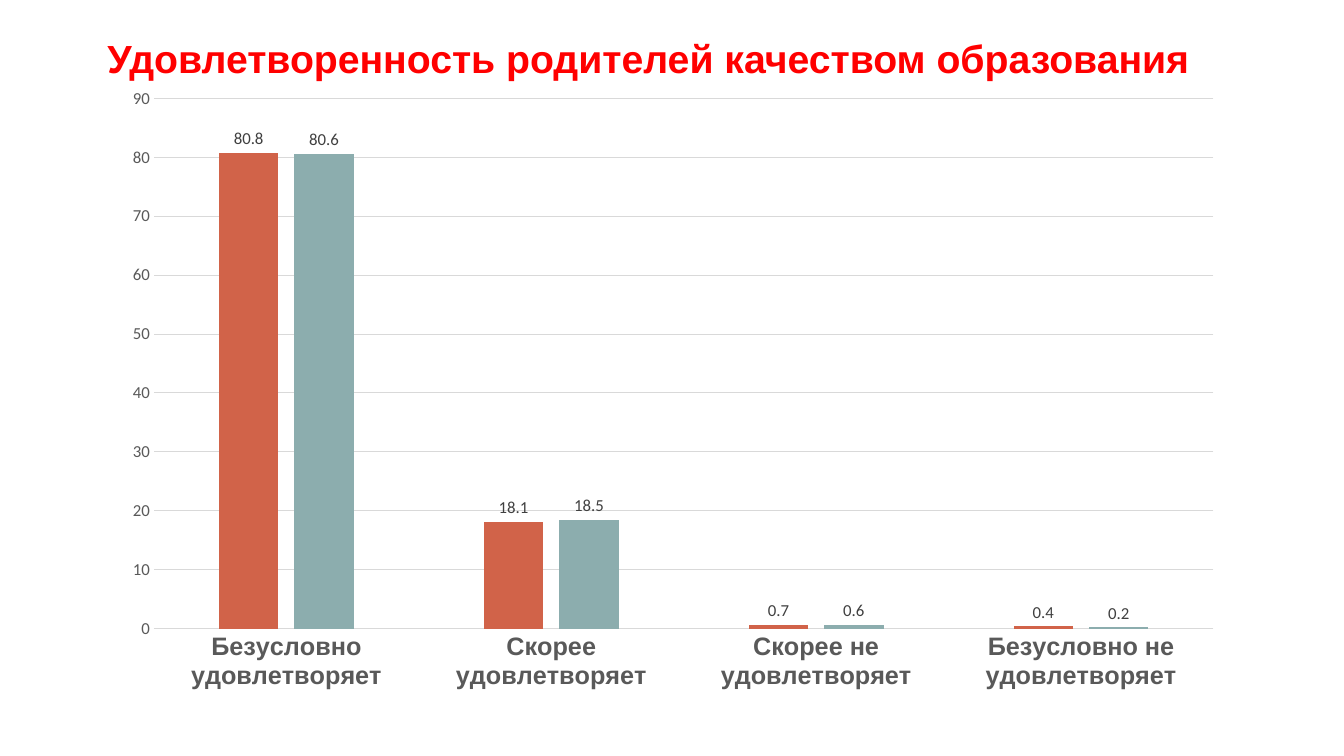
from lxml import etree
from pptx import Presentation
from pptx.chart.data import CategoryChartData
from pptx.dml.color import RGBColor
from pptx.enum.chart import XL_CHART_TYPE as ChartType
from pptx.enum.chart import XL_LABEL_POSITION as LabelPosition
from pptx.enum.chart import XL_TICK_MARK as TickMark
from pptx.enum.text import MSO_ANCHOR as Anchor
from pptx.enum.text import PP_ALIGN as Align
from pptx.oxml.ns import qn
from pptx.util import Inches, Pt

COLORS = {
    "title": "FF0000",
    "axis_text": "595959",
    "grid": "D9D9D9",
    "label": "404040",
}
ANSWERS = [
    "Безусловно удовлетворяет",
    "Скорее удовлетворяет",
    "Скорее не удовлетворяет",
    "Безусловно не удовлетворяет",
]
SURVEYS = [
    ("Series 1", (80.8, 18.1, 0.7, 0.4), "D16349"),
    ("Series 2", (80.6, 18.5, 0.6, 0.2), "8CADAE"),
]
PLOT_LAYOUT = {"x": 0.04, "y": 0.03, "w": 0.94, "h": 0.85}


def rgb(value):
    return RGBColor.from_string(value)


def style_font(font, size, color, name="Calibri", bold=False):
    font.size = Pt(size)
    font.name = name
    font.bold = bold
    font.color.rgb = rgb(color)


def style_line(line):
    line.color.rgb = rgb(COLORS["grid"])
    line.width = Pt(0.75)


def place_plot(chart):
    plot_area = chart.plots[0]._element.getparent()
    layout = plot_area.find(qn("c:layout"))
    if layout is None:
        layout = etree.Element(qn("c:layout"))
        plot_area.insert(0, layout)
    manual = etree.SubElement(layout, qn("c:manualLayout"))
    settings = {"layoutTarget": "inner", "xMode": "edge", "yMode": "edge", **PLOT_LAYOUT}
    for tag, value in settings.items():
        etree.SubElement(manual, qn(f"c:{tag}")).set("val", str(value))


def add_heading(slide, left, top, width, height):
    heading = slide.shapes.title
    heading.left, heading.top = Inches(left), Inches(top)
    heading.width, heading.height = Inches(width), Inches(height)
    frame = heading.text_frame
    frame.text = "Удовлетворенность родителей качеством образования"
    frame.word_wrap = True
    frame.vertical_anchor = Anchor.MIDDLE
    paragraph = frame.paragraphs[0]
    paragraph.alignment = Align.CENTER
    style_font(paragraph.runs[0].font, 28, COLORS["title"], "Arial", True)


def add_satisfaction_chart(slide, left, top, width, height):
    data = CategoryChartData(number_format="General")
    data.categories = ANSWERS
    for name, shares, _ in SURVEYS:
        data.add_series(name, shares)
    chart = slide.shapes.add_chart(
        ChartType.COLUMN_CLUSTERED,
        Inches(left), Inches(top), Inches(width), Inches(height), data,
    ).chart
    chart.has_title = False
    chart.has_legend = False
    style_font(chart.font, 10, "000000")

    columns = chart.plots[0]
    columns.gap_width = 219
    columns.overlap = -27
    columns.vary_by_categories = False
    for series, (_, _, color) in zip(columns.series, SURVEYS):
        series.format.fill.solid()
        series.format.fill.fore_color.rgb = rgb(color)
        labels = series.data_labels
        labels.show_value = True
        labels.position = LabelPosition.OUTSIDE_END
        style_font(labels.font, 12, COLORS["label"])

    answer_axis, share_axis = chart.category_axis, chart.value_axis
    for axis in (answer_axis, share_axis):
        axis.major_tick_mark = axis.minor_tick_mark = TickMark.NONE
    style_font(answer_axis.tick_labels.font, 18, COLORS["axis_text"], "Arial", True)
    style_line(answer_axis.format.line)
    style_font(share_axis.tick_labels.font, 12, COLORS["axis_text"])
    share_axis.format.line.fill.background()
    share_axis.minimum_scale, share_axis.maximum_scale = 0, 90
    share_axis.major_unit = 10
    share_axis.has_major_gridlines = True
    style_line(share_axis.major_gridlines.format.line)
    place_plot(chart)


def main():
    presentation = Presentation()
    presentation.slide_width = Inches(13.33)
    presentation.slide_height = Inches(7.5)
    slide = presentation.slides.add_slide(presentation.slide_layouts[5])
    add_satisfaction_chart(slide, 1.08, 0.79, 11.18, 6.19)
    add_heading(slide, 0.13, 0.29, 12.6, 0.57)
    presentation.save("out.pptx")


if __name__ == "__main__":
    main()
